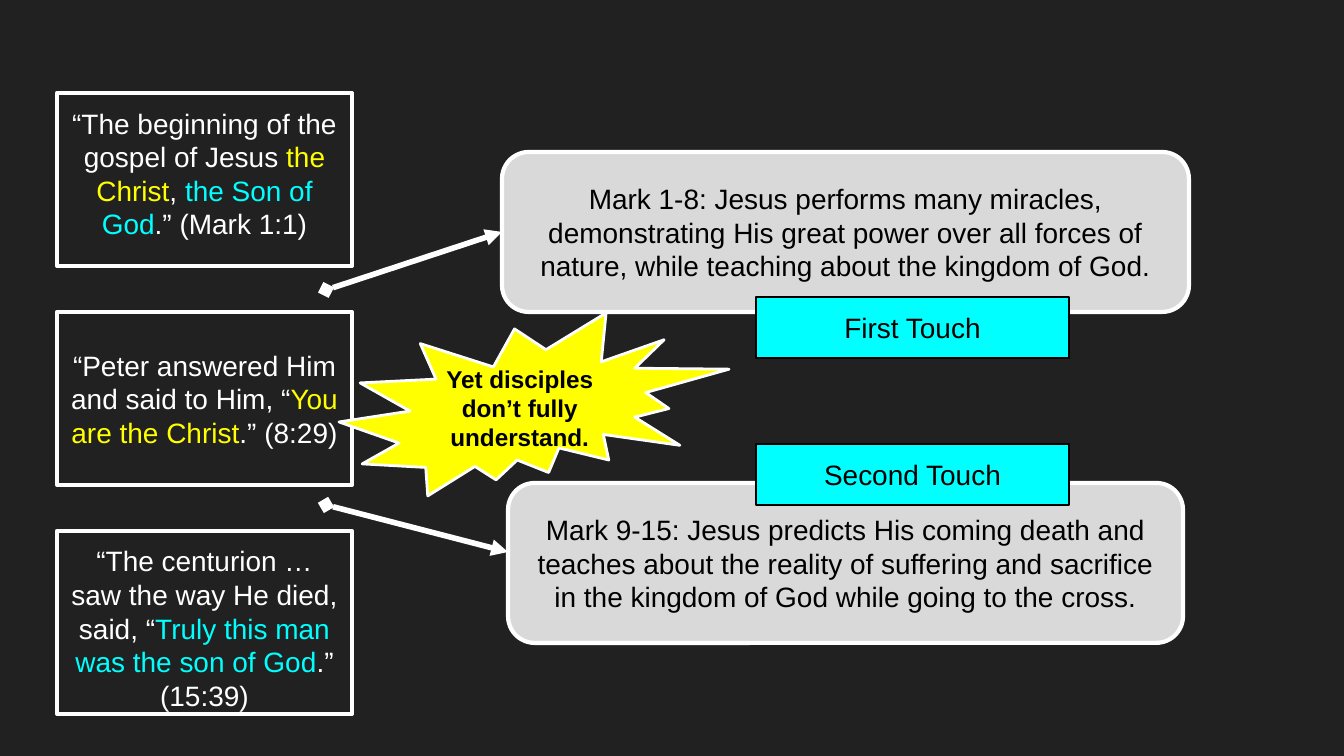
from dataclasses import dataclass
from typing import Optional

from lxml.etree import SubElement
from pptx import Presentation
from pptx.dml.color import RGBColor
from pptx.enum.shapes import MSO_CONNECTOR, MSO_SHAPE
from pptx.enum.text import MSO_ANCHOR, PP_ALIGN
from pptx.oxml.ns import qn
from pptx.util import Emu, Pt

SLIDE_WIDTH, SLIDE_HEIGHT = 1344, 756
EMU_PER_PX = 9144000 / SLIDE_WIDTH


@dataclass(frozen=True)
class Theme:
    font: str = "Arial"
    background: str = "212121"
    white: str = "FFFFFF"
    black: str = "000000"
    panel: str = "D9D9D9"
    christ: str = "FFFF00"
    son: str = "00FFFF"
    body_size: int = 15
    burst_size: int = 13
    inset: int = 13


THEME = Theme()


@dataclass(frozen=True)
class Span:
    text: str
    color: str


@dataclass(frozen=True)
class Style:
    preset: MSO_SHAPE
    fill: Optional[str]
    line: str
    line_width: float
    anchor: MSO_ANCHOR = MSO_ANCHOR.MIDDLE
    side_inset: int = THEME.inset
    size: int = THEME.body_size
    bold: bool = False


@dataclass(frozen=True)
class Box:
    left: int
    top: int
    width: int
    height: int
    style: Style
    spans: tuple[Span, ...]


@dataclass(frozen=True)
class Arrow:
    start: tuple[int, int]
    end: tuple[int, int]


QUOTE = Style(MSO_SHAPE.RECTANGLE, None, THEME.white, 2.25)
TOP_QUOTE = Style(MSO_SHAPE.RECTANGLE, None, THEME.white, 2.25, MSO_ANCHOR.TOP)
PANEL = Style(MSO_SHAPE.ROUNDED_RECTANGLE, THEME.panel, THEME.white, 2.25)
TOUCH = Style(MSO_SHAPE.RECTANGLE, THEME.son, THEME.black, 0.75)
BURST = Style(MSO_SHAPE.EXPLOSION2, THEME.christ, THEME.white, 1.5,
              side_inset=0, size=THEME.burst_size, bold=True)


def white(text: str) -> Span:
    return Span(text, THEME.white)


def black(text: str) -> Span:
    return Span(text, THEME.black)


QUOTES_AND_PANELS = (
    Box(57, 93, 295, 173, TOP_QUOTE, (
        white("“The beginning of the gospel of Jesus "), Span("the Christ", THEME.christ),
        white(", "), Span("the Son of God", THEME.son), white(".” (Mark 1:1)"))),
    Box(57, 312, 295, 173, QUOTE, (
        white("“Peter answered Him and said to Him, “"),
        Span("You are the Christ", THEME.christ), white(".” (8:29)"))),
    Box(57, 531, 295, 183, TOP_QUOTE, (
        white("“The centurion … saw the way He died, said, “"),
        Span("Truly this man was the son of God", THEME.son), white(".” (15:39)"))),
    Box(502, 152, 687, 160, PANEL, (
        black("Mark 1-8: Jesus performs many miracles, demonstrating His great power "
              "over all forces of nature, while teaching about the kingdom of God."),)),
    Box(508, 483, 675, 160, PANEL, (
        black("Mark 9-15: Jesus predicts His coming death and teaches about the reality "
              "of suffering and sacrifice in the kingdom of God while going to the cross."),)),
)
ARROWS = (Arrow((326, 290), (502, 232)), Arrow((326, 505), (508, 552)))
CALLOUTS = (
    Box(339, 313, 390, 183, BURST, (black("Yet disciples don’t fully understand."),)),
    Box(756, 297, 313, 61, TOUCH, (black("First Touch"),)),
    Box(756, 444, 313, 61, TOUCH, (black("Second Touch"),)),
)


def px(length: int) -> Emu:
    return Emu(round(length * EMU_PER_PX))


def add_span(para, text: str, *, color: str, size: int, bold: bool) -> None:
    run = para.add_run()
    run.text = text
    run.font.name = THEME.font
    run.font.size = Pt(size)
    run.font.bold = bold
    run.font.color.rgb = RGBColor.from_string(color)


def draw_box(page, box: Box) -> None:
    style = box.style
    shape = page.shapes.add_shape(
        style.preset, px(box.left), px(box.top), px(box.width), px(box.height))
    shape.shadow.inherit = False
    if style.fill:
        shape.fill.solid()
        shape.fill.fore_color.rgb = RGBColor.from_string(style.fill)
    else:
        shape.fill.background()
    shape.line.color.rgb = RGBColor.from_string(style.line)
    shape.line.width = Pt(style.line_width)

    frame = shape.text_frame
    frame.word_wrap = True
    frame.vertical_anchor = style.anchor
    frame.margin_left = frame.margin_right = px(style.side_inset)
    frame.margin_top = frame.margin_bottom = px(THEME.inset)
    para = frame.paragraphs[0]
    para.alignment = PP_ALIGN.CENTER
    for span in box.spans:
        add_span(para, span.text, color=span.color, size=style.size, bold=style.bold)


def draw_arrow(page, arrow: Arrow) -> None:
    """Draw a connector with a diamond at its start and a triangle at its end."""
    connector = page.shapes.add_connector(
        MSO_CONNECTOR.STRAIGHT, *map(px, arrow.start + arrow.end))
    connector.line.color.rgb = RGBColor.from_string(THEME.white)
    connector.line.width = Pt(3)
    line = connector.line._get_or_add_ln()
    SubElement(line, qn("a:headEnd"), type="diamond")
    SubElement(line, qn("a:tailEnd"), type="triangle")
    SubElement(connector._element.spPr, qn("a:effectLst"))


def main() -> None:
    deck = Presentation()
    deck.slide_width, deck.slide_height = px(SLIDE_WIDTH), px(SLIDE_HEIGHT)
    page = deck.slides.add_slide(deck.slide_layouts.get_by_name("Blank"))
    page.background.fill.solid()
    page.background.fill.fore_color.rgb = RGBColor.from_string(THEME.background)

    for box in QUOTES_AND_PANELS:
        draw_box(page, box)
    for arrow in ARROWS:
        draw_arrow(page, arrow)
    for box in CALLOUTS:
        draw_box(page, box)
    deck.save("out.pptx")


if __name__ == "__main__":
    main()
